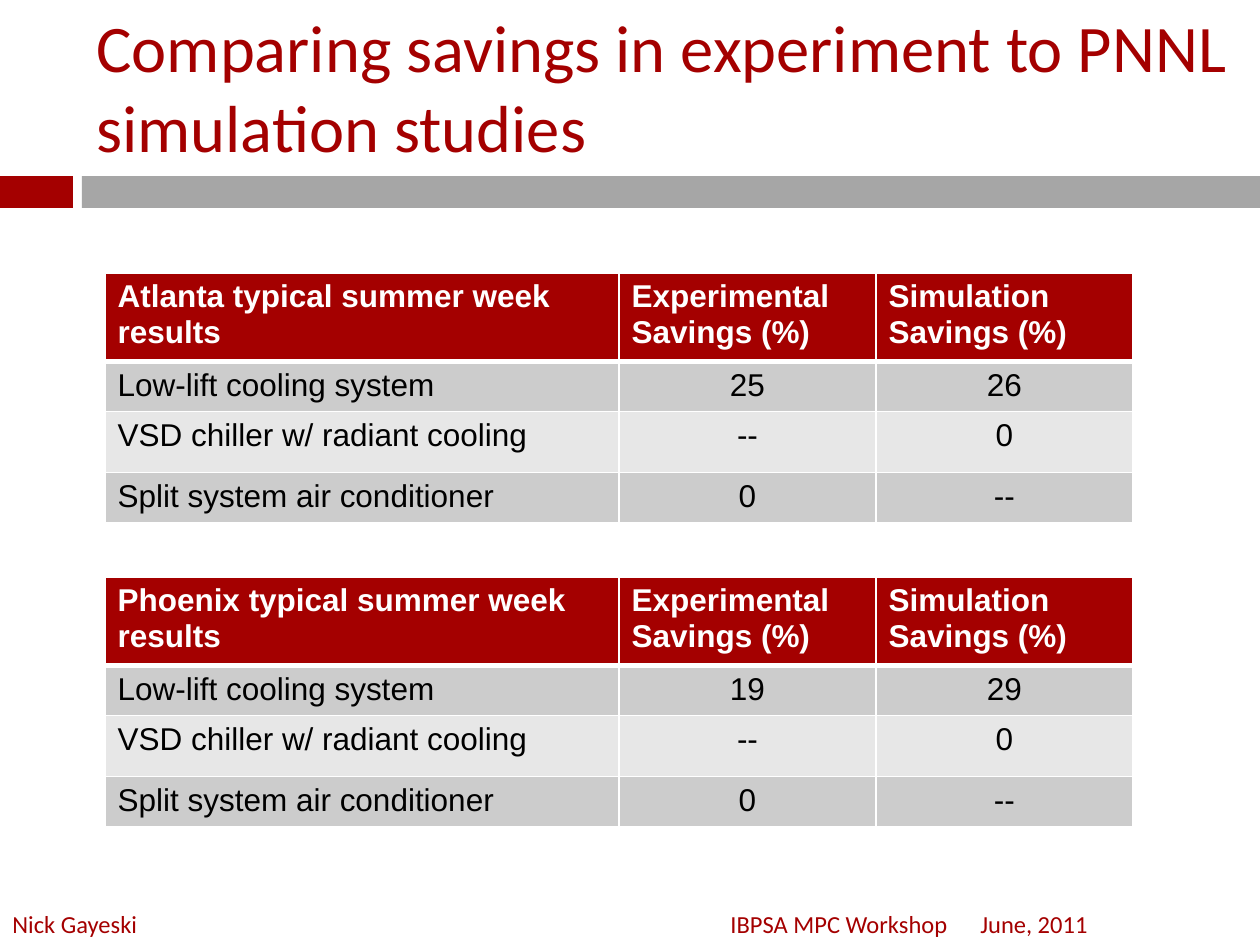
from lxml import etree
from pptx import Presentation
from pptx.dml.color import RGBColor
from pptx.enum import shapes, text
from pptx.oxml.ns import qn
from pptx.util import Pt

PX = 914400 // 126
COLOURS = {
    "red": "A40000",
    "grey": "A6A6A6",
    "dark_band": "CCCCCC",
    "light_band": "E7E7E7",
    "white": "FFFFFF",
    "black": "000000",
}
COLUMN_WIDTHS = [514, 257, 257]
ROW_HEIGHTS = [82, 47, 61, 48]


def px(*lengths):
    return [length * PX for length in lengths]


def colour(name):
    return RGBColor.from_string(COLOURS[name])


def add_span(para, words, size, font, tint, bold=False):
    span = para.add_run()
    span.text = words
    span.font.size = Pt(size)
    span.font.name = font
    span.font.bold = bold
    span.font.color.rgb = colour(tint)


def add_text(page, box, words, size, anchor, tabs=()):
    frame = page.shapes.add_textbox(*px(*box)).text_frame
    frame.word_wrap = True
    frame.vertical_anchor = anchor
    para = frame.paragraphs[0]
    if tabs:
        stops = etree.SubElement(para._p.get_or_add_pPr(), qn("a:tabLst"))
        for position in tabs:
            etree.SubElement(stops, qn("a:tab"), pos=str(position * PX), algn="l")
    add_span(para, words, size, "Calibri", "red")


def add_divider(page, box):
    left, top, width, height = box
    accent, gap = 73, 9
    bars = [
        (left, accent, "red"),
        (left + accent + gap, width - accent - gap, "grey"),
    ]
    for start, length, tint in bars:
        bar = page.shapes.add_shape(
            shapes.MSO_SHAPE.RECTANGLE, *px(start, top, length, height))
        bar.shadow.inherit = False
        bar.fill.solid()
        bar.fill.fore_color.rgb = colour(tint)
        bar.line.fill.background()


def add_borders(cell, row):
    widths = {"L": 1, "R": 1, "T": 3 if row == 1 else 1, "B": 3 if row == 0 else 1}
    properties = cell._tc.get_or_add_tcPr()
    for side, width in widths.items():
        line = etree.SubElement(properties, qn(f"a:ln{side}"), w=str(Pt(width)))
        fill = etree.SubElement(line, qn("a:solidFill"))
        etree.SubElement(fill, qn("a:srgbClr"), val=COLOURS["white"])


def add_results(page, left, top, city, savings):
    rows = [
        (f"{city} typical summer week results",
         "Experimental Savings (%)", "Simulation Savings (%)"),
        ("Low-lift cooling system", *savings),
        ("VSD chiller w/ radiant cooling", "--", "0"),
        ("Split system air conditioner", "0", "--"),
    ]
    bands = ["red", "dark_band", "light_band", "dark_band"]
    table = page.shapes.add_table(
        len(rows), len(COLUMN_WIDTHS),
        *px(left, top, sum(COLUMN_WIDTHS), sum(ROW_HEIGHTS))).table
    for column, width in zip(table.columns, COLUMN_WIDTHS):
        column.width = width * PX
    for row, values in enumerate(rows):
        table.rows[row].height = ROW_HEIGHTS[row] * PX
        header = row == 0
        for column, words in enumerate(values):
            cell = table.cell(row, column)
            add_borders(cell, row)
            cell.fill.solid()
            cell.fill.fore_color.rgb = colour(bands[row])
            para = cell.text_frame.paragraphs[0]
            if column and not header:
                para.alignment = text.PP_ALIGN.CENTER
            add_span(para, words, 18, "Arial", "white" if header else "black", header)


def main():
    deck = Presentation()
    deck.slide_width, deck.slide_height = px(1260, 945)
    page = deck.slides.add_slide(deck.slide_layouts[6])
    add_divider(page, (0, 176, 1260, 32))
    add_text(page, (84, 0, 1207, 179),
             "Comparing savings in experiment to PNNL simulation studies",
             38, text.MSO_ANCHOR.TOP)
    add_text(page, (0, 903, 1260, 42),
             "Nick Gayeski\tIBPSA MPC Workshop\tJune, 2011",
             14, text.MSO_ANCHOR.MIDDLE, tabs=(718, 968))
    add_results(page, 105, 273, "Atlanta", ("25", "26"))
    add_results(page, 105, 577, "Phoenix", ("19", "29"))
    deck.save("out.pptx")


if __name__ == "__main__":
    main()
